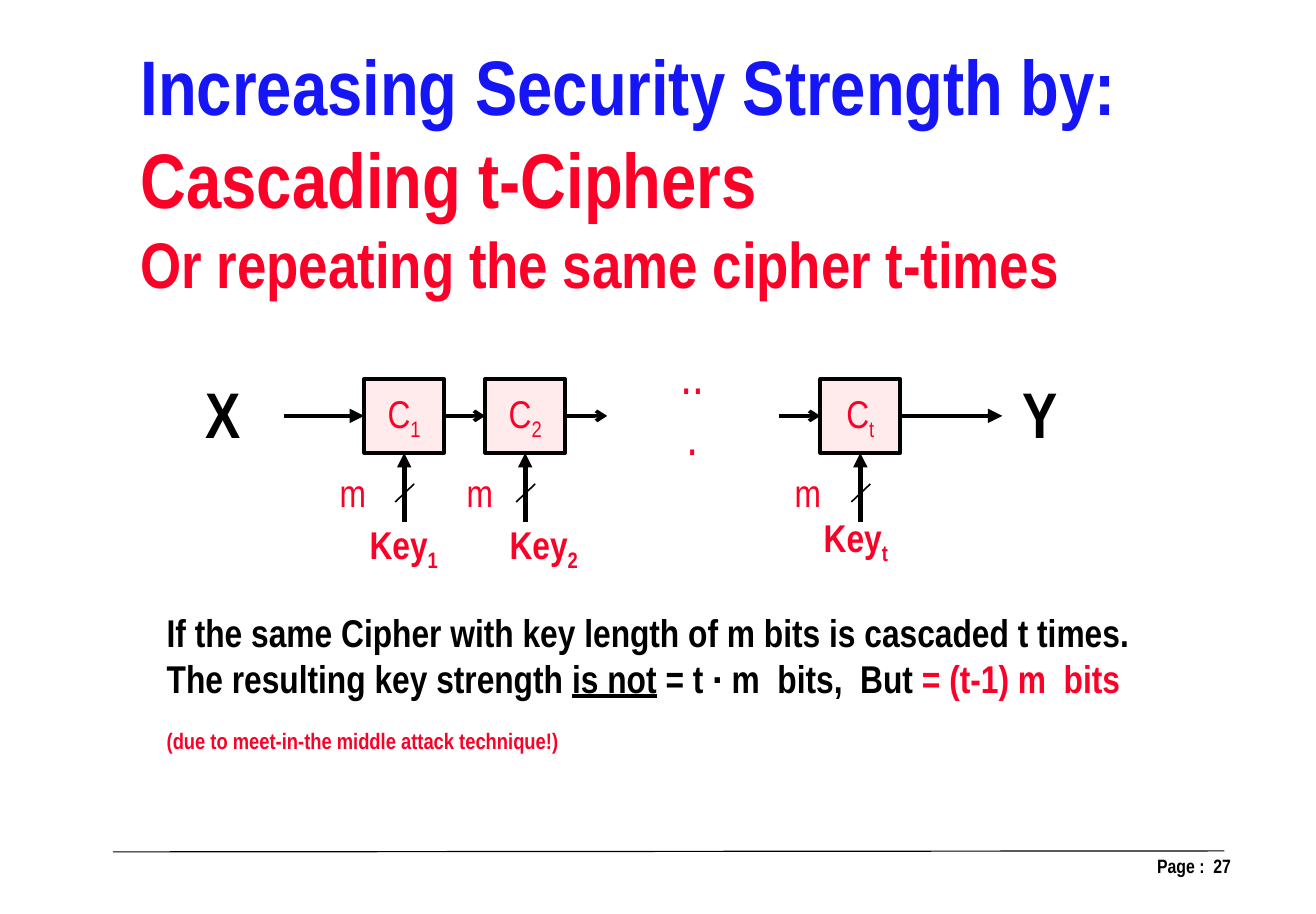
from pptx import Presentation, util as u
from pptx.dml.color import RGBColor
from pptx.enum import shapes, text
from pptx.oxml.ns import qn
from lxml import etree

BLACK = RGBColor(0x00, 0x00, 0x00)
RED = RGBColor(0xFC, 0x01, 0x28)
BLUE = RGBColor(0x15, 0x15, 0xF5)
PINK = RGBColor(0xFF, 0xEB, 0xEB)
FONT = "Arial Narrow"
LEFT, MID, RIGHT = text.PP_ALIGN.LEFT, text.PP_ALIGN.CENTER, text.PP_ALIGN.RIGHT
TOP, CENTER = text.MSO_ANCHOR.TOP, text.MSO_ANCHOR.MIDDLE
ABOVE, WEST, BELOW, EAST = range(4)


def px(n):
    return u.Emu(round(n * 914400 / 116))


def write(shape, paras, size=24, color=RED, bold=False, align=LEFT,
          anchor=TOP, wrap=False):
    frame = shape.text_frame
    frame.word_wrap = wrap
    frame.auto_size = text.MSO_AUTO_SIZE.NONE
    frame.vertical_anchor = anchor
    for i, parts in enumerate(paras):
        para = frame.add_paragraph() if i else frame.paragraphs[0]
        para.alignment = align
        para.space_before = u.Pt(0)
        for words, style in parts:
            run = para.add_run()
            run.text = words
            font = run.font
            font.name = FONT
            font.size = u.Pt(style.get("size", size))
            font.bold = bold
            font.underline = style.get("under", False)
            font.color.rgb = style.get("color", color)
            if style.get("sub"):
                run._r.get_or_add_rPr().set("baseline", "-25000")


def place(shape, box):
    shape.left, shape.top, shape.width, shape.height = map(px, box)


def label(slide, box, parts, **style):
    shape = slide.shapes.add_textbox(*map(px, box))
    write(shape, [parts], **style)
    return shape


def line(slide, start, end, width, head=None, source=None, target=None):
    link = slide.shapes.add_connector(
        shapes.MSO_CONNECTOR.STRAIGHT, *map(px, start + end))
    link.line.color.rgb = BLACK
    link.line.width = u.Pt(width)
    props = link._element.spPr
    if head:
        etree.SubElement(props.find(qn("a:ln")), qn("a:tailEnd"), type=head)
    etree.SubElement(props, qn("a:effectLst"))
    if source:
        link.begin_connect(*source)
    if target:
        link.end_connect(*target)


def heading(slide, box):
    title = slide.shapes.title
    place(title, box)
    write(title, [
        [("Increasing Security Strength by: ", {"color": BLUE}),
         ("Cascading t-Ciphers", {})],
        [("Or repeating the same cipher t-times", {"size": 40})],
    ], size=48, bold=True, anchor=CENTER, wrap=True)


def stage(slide, box, index, m_dx, key_dx, key_dy):
    x, y, w, h = box
    block = slide.shapes.add_shape(shapes.MSO_SHAPE.RECTANGLE, *map(px, box))
    block.shadow.inherit = False
    block.fill.solid()
    block.fill.fore_color.rgb = PINK
    block.line.color.rgb = BLACK
    block.line.width = u.Pt(2.25)
    sub = (index, {"sub": True})
    write(block, [[("C", {}), sub]], align=MID, anchor=CENTER)
    mid, base = x + w // 2, y + h
    line(slide, (mid, base + 69), (mid, base), 3, "triangle",
         target=(block, BELOW))
    line(slide, (mid + 10, base + 31), (mid - 9, base + 49), 1)
    label(slide, (x + m_dx, base + 10, 50, 58), [("m", {})])
    label(slide, (x + key_dx, base + key_dy, 92, 58),
          [("Key", {}), sub], bold=True)
    return block


def cascade(slide, box):
    x, y, w, h = box
    mid = y + h // 2
    for name, left in (("X", x), ("Y", x + w - 58)):
        label(slide, (left, mid - 48, 58, 90), [(name, {})], size=40,
              color=BLACK, bold=True, align=MID, anchor=CENTER)
    first, second, last = [
        stage(slide, (x + dx, y, 80, h), *spec_row)
        for dx, *spec_row in ((170, "1", -36, -6, 62),
                              (291, "2", -30, 13, 62),
                              (626, "t", -37, -8, 55))]
    line(slide, (x + 90, mid), (x + 170, mid), 3, "triangle",
         target=(first, WEST))
    line(slide, (x + 250, mid), (x + 291, mid), 2.25, "arrow",
         source=(first, EAST), target=(second, WEST))
    line(slide, (x + 371, mid), (x + 413, mid), 2.25, "arrow",
         source=(second, EAST))
    line(slide, (x + 585, mid), (x + 626, mid), 2.25, "arrow",
         target=(last, WEST))
    line(slide, (x + 706, mid), (x + 808, mid), 3, "triangle",
         source=(last, EAST))
    label(slide, (x + 469, mid - 48, 58, 73), [("...", {})], size=32,
          align=MID, anchor=CENTER, wrap=True)


def result(slide, box):
    body = slide.placeholders[1]
    place(body, box)
    write(body, [
        [("If the same Cipher with key length of m bits is cascaded t times.",
          {})],
        [("The resulting key strength ", {}), ("is not", {"under": True}),
         (" = t ∙ m  bits,  But ", {}), ("= (t-1) m  bits", {"color": RED})],
        [("(due to meet-in-the middle attack technique!)",
          {"color": RED, "sub": True})],
    ], color=BLACK, bold=True, wrap=True)
    for para in body.text_frame.paragraphs:
        props = para._p.get_or_add_pPr()
        props.set("marL", "0")
        props.set("indent", "0")
        etree.SubElement(props, qn("a:buNone"))


def footer(slide, box):
    x, y, w, h = box
    line(slide, (x, y + 1), (x + w, y), 0.75)
    label(slide, (x + w - 280, y - 2, 298, h), [("Page :  27", {})],
          size=12, color=BLACK, bold=True, align=RIGHT, wrap=True)


def main():
    deck = Presentation()
    deck.slide_width, deck.slide_height = u.Inches(11.34), u.Inches(7.88)
    slide = deck.slides.add_slide(deck.slide_layouts[1])
    heading(slide, (129, 56, 1107, 228))
    cascade(slide, (194, 379, 875, 74))
    result(slide, (155, 603, 1053, 137))
    footer(slide, (113, 851, 1111, 40))
    deck.save("out.pptx")


if __name__ == "__main__":
    main()
